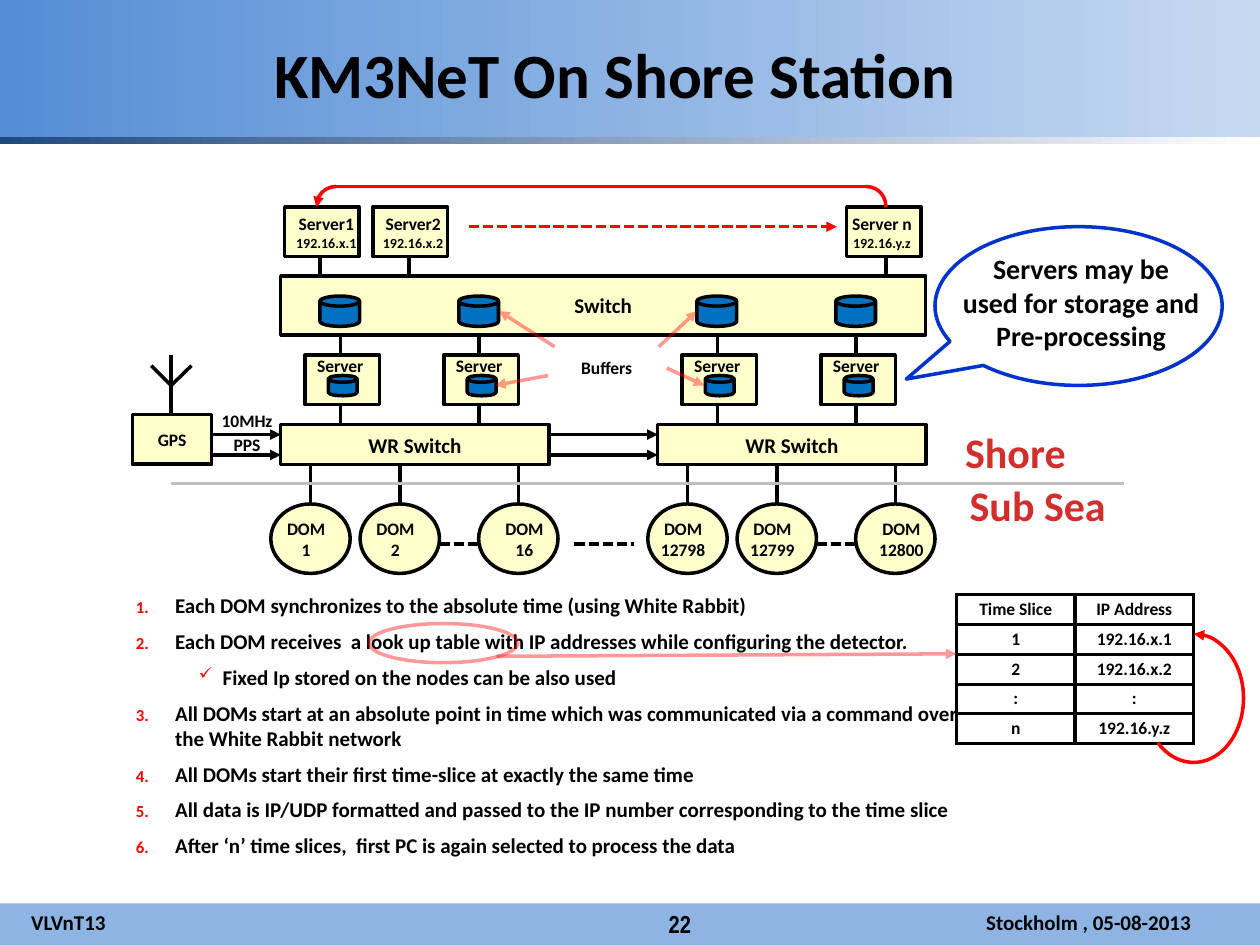
from lxml import etree
from pptx import Presentation
from pptx.dml.color import RGBColor
from pptx.enum.dml import MSO_LINE
from pptx.enum.shapes import MSO_CONNECTOR, MSO_SHAPE as Kind
from pptx.enum.text import MSO_ANCHOR as Anchor, PP_ALIGN as Align
from pptx.oxml.ns import qn
from pptx.util import Cm, Pt

BLACK, WHITE = RGBColor(0, 0, 0), RGBColor(255, 255, 255)
RED, CRIMSON = RGBColor(255, 0, 0), RGBColor(0xD0, 0x2F, 0x2C)
CREAM, DISK_BLUE = RGBColor(0xFF, 0xFF, 0xCC), RGBColor(0x00, 0x70, 0xC0)
BUBBLE_BLUE, GREY = RGBColor(0x00, 0x33, 0xCC), RGBColor(0xBF, 0xBF, 0xBF)
FOOTER_BLUE = RGBColor(0x8E, 0xB4, 0xE3)
BANNER = RGBColor(0x55, 0x8E, 0xD5), RGBColor(0xC6, 0xD9, 0xF1)
STRIP = RGBColor(0x1F, 0x49, 0x7D), WHITE

TOP_SERVERS = [  # name, address, box left, label centre, link x
    ("Server1", "192.16.x.1", 5.74, 6.58, 6.45),
    ("Server2", "192.16.x.2", 7.52, 8.33, 8.25),
    ("Server n", "192.16.y.z", 17.07, 17.78, 17.86),
]
HALVES = [(5.66, ["1", "2", "16"]), (13.26, ["12798", "12799", "12800"])]
DOM_OFFSETS = [(-0.2, -0.09), (1.6, -0.09), (3.99, 0.12)]  # left, label shift
SERVER_OFFSETS = [1.2, 4]
STEPS = [
    (0, "Each DOM synchronizes to the absolute time (using White Rabbit)"),
    (0, "Each DOM receives  a look up table with IP addresses while configuring the detector."),
    (1, "Fixed Ip stored on the nodes can be also used"),
    (0, "All DOMs start at an absolute point in time which was communicated via a command over "
        "the White Rabbit network"),
    (0, "All DOMs start their first time-slice at exactly the same time"),
    (0, "All data is IP/UDP formatted and passed to the IP number corresponding to the time slice"),
    (0, "After ‘n’ time slices,  first PC is again selected to process the data"),
]
INDENTS = [(1.02, -0.79), (1.98, -0.48)]
SLICES = [("Time Slice", "IP Address"), ("1", "192.16.x.1"), ("2", "192.16.x.2"),
          (":", ":"), ("n", "192.16.y.z")]
ANTENNA = [
    ((3.45, 7.16), (3.45, 8.36)), ((3.05, 7.37), (3.45, 7.77)), ((3.45, 7.77), (3.86, 7.37))]
CLOCK_ARROWS = [((left, y), (right, y)) for left, right in [(4.27, 5.66), (11.05, 13.26)]
                for y in (8.76, 9.17)]
FADED_ARROWS = [  # buffers to disks, lookup table to IP table
    ((13.28, 6.99), (14.05, 6.27)), ((11.18, 6.99), (10.06, 6.27)),
    ((11.05, 7.57), (9.98, 7.77)), ((13.44, 7.42), (14.2, 7.77)),
    ((10.01, 13.23), (19.28, 13.18))]
FREE_LABELS = [  # text, centre, top, width, size, colour
    ("PPS", 4.98, 8.62, 1.6, 10, BLACK), ("10MHz", 4.98, 8.15, 2, 10, BLACK),
    ("Buffers", 12.23, 7.07, 2, 10, BLACK), ("Shore", 20.47, 8.48, 3.2, 24, CRIMSON),
    ("Sub Sea", 20.92, 9.55, 4, 24, CRIMSON)]

deck = Presentation()
deck.slide_width, deck.slide_height = Cm(25.4), Cm(19.05)
page = deck.slides.add_slide(deck.slide_layouts[6])


def child(parent, tag, **attributes):
    return etree.SubElement(parent, qn(tag), attributes)


def write(frame, lines, sizes, align=Align.CENTER, color=BLACK, font="Calibri"):
    """Fill a text frame, one paragraph a line; the last size serves all later lines."""
    for index, line in enumerate(lines):
        para = frame.paragraphs[0] if index == 0 else frame.add_paragraph()
        para.alignment = align
        span = para.add_run()
        span.text = line
        size = sizes[min(index, len(sizes) - 1)]
        for key, value in {"name": font, "size": Pt(size), "bold": True}.items():
            setattr(span.font, key, value)
        span.font.color.rgb = color


def text(at, lines, *sizes, wrap=False, **style):
    box = page.shapes.add_textbox(*map(Cm, at))
    box.text_frame.word_wrap = wrap
    write(box.text_frame, lines, sizes, **style)
    return box


def label(center, top, lines, *sizes, width=2, **style):
    """Place a text box around a centre x, as tall as its lines need."""
    height = 0.25 + 0.045 * sizes[0] * len(lines)
    text((center - width / 2, top, width, height), lines, *sizes, **style)


def stroke(item, color=BLACK, dashed=False, faded=False, arrow=None):
    item.line.color.rgb = color
    item.line.width = Pt(2)
    if dashed:
        item.line.dash_style = MSO_LINE.SQUARE_DOT
    ln = item.line._get_or_add_ln()
    if faded:
        child(ln.find(".//" + qn("a:srgbClr")), "a:alpha", val="40000")
    if arrow:
        child(ln, arrow, type="triangle")


def shape(kind, at, fill=None, caption=None, size=12, adjust=(), outlined=True, **line_style):
    item = page.shapes.add_shape(kind, *map(Cm, at))
    item.shadow.inherit = False
    for index, value in enumerate(adjust):
        item.adjustments[index] = value
    if fill is None:
        item.fill.background()
    elif isinstance(fill, RGBColor):
        item.fill.solid()
        item.fill.fore_color.rgb = fill
    else:
        item.fill.gradient()
        item.fill.gradient_angle = 0
        for position, (stop, color) in enumerate(zip(item.fill.gradient_stops, fill)):
            stop.color.rgb, stop.position = color, position
    if outlined:
        stroke(item, **line_style)
    else:
        item.line.fill.background()
    if caption:
        item.text_frame.vertical_anchor = Anchor.MIDDLE
        write(item.text_frame, [caption], [size])


def line(start, end, **style):
    item = page.shapes.add_connector(MSO_CONNECTOR.STRAIGHT, *map(Cm, start + end))
    stroke(item, **style)
    child(item._element.spPr, "a:effectLst")


def banner_and_footer():
    shape(Kind.RECTANGLE, (0, 18.21, 25.4, 0.84), FOOTER_BLUE, outlined=False)
    text((12.88, 18.21, 1.65, 0.86), ["22"], 14, wrap=True, font="Arial Narrow")
    shape(Kind.RECTANGLE, (0, 0, 25.4, 2.77), BANNER, outlined=False)
    text((0, 0.6, 24.8, 1.8), ["KM3NeT On Shore Station"], 36, wrap=True)
    shape(Kind.RECTANGLE, (0, 2.77, 25.4, 0.13), STRIP, outlined=False)
    footer = text((0.38, 18.21, 25.02, 0.76), ["VLVnT13\tStockholm , 05-08-2013"], 12,
                  wrap=True, align=Align.LEFT)
    tabs = child(footer.text_frame.paragraphs[0]._p.get_or_add_pPr(), "a:tabLst")
    child(tabs, "a:tab", pos=str(Cm(19.25)), algn="l")


def numbered_steps():
    box = text((2.26, 11.83, 17.6, 5.74), [step for _, step in STEPS], 12,
               wrap=True, align=Align.LEFT)
    for para, (level, _) in zip(box.text_frame.paragraphs, STEPS):
        para.level, para.space_before = level, Pt(6)
        props = para._p.get_or_add_pPr()
        for key, value in zip(("marL", "indent"), INDENTS[level]):
            props.set(key, str(Cm(value)))
        child(child(props, "a:buClr"), "a:srgbClr", val=str(RED))
        child(props, "a:buSzPct", val="80000")
        if level:
            child(props, "a:buChar", char="✓")
        else:
            child(props, "a:buAutoNum", type="arabicPeriod")


def slice_table():
    height = 0.6
    table = page.shapes.add_table(len(SLICES), 2, Cm(19.28), Cm(11.99), Cm(4.78),
                                  Cm(height * len(SLICES))).table
    for row, values in zip(table.rows, SLICES):
        row.height = Cm(height)
        for cell, value in zip(row.cells, values):
            cell.margin_top = cell.margin_bottom = 0
            cell.vertical_anchor = Anchor.MIDDLE
            write(cell.text_frame, [value], [10])
            props = cell._tc.get_or_add_tcPr()
            for side in ("a:lnL", "a:lnR", "a:lnT", "a:lnB"):
                border = child(props, side, w=str(Pt(2)))
                child(child(border, "a:solidFill"), "a:srgbClr", val=str(BLACK))
            cell.fill.solid()
            cell.fill.fore_color.rgb = WHITE


def station_half(left, doms):
    """Two servers with buffers, their WR switch and the DOMs below it."""
    shape(Kind.RECTANGLE, (left, 8.56, 5.41, 0.81), CREAM, "WR Switch")
    for link in (left + offset for offset in SERVER_OFFSETS):
        shape(Kind.FLOWCHART_MAGNETIC_DISK, (link - 0.41, 5.97, 0.8, 0.61), DISK_BLUE)
        shape(Kind.RECTANGLE, (link - 0.71, 7.16, 1.5, 1), CREAM)
        shape(Kind.FLOWCHART_MAGNETIC_DISK, (link - 0.24, 7.57, 0.58, 0.41), DISK_BLUE)
        label(link, 7.04, ["Server"], 10)
        for top in (6.76, 8.15):
            line((link, top), (link, top + 0.4))
    for number, (offset, shift) in zip(doms, DOM_OFFSETS):
        center = left + offset + 0.8
        line((center, 9.37), (center, 10.16))
        shape(Kind.OVAL, (center - 0.8, 10.16, 1.6, 1.4), CREAM)
        label(center + shift, 10.31, ["DOM", number], 10)
    line((left + 3.2, 10.97), (left + 3.99, 10.97), dashed=True)


banner_and_footer()
numbered_steps()
slice_table()
shape(Kind.RECTANGLE, (5.66, 5.56, 13, 1.19), CREAM, "Switch")
for name, address, left, center, link in TOP_SERVERS:
    shape(Kind.RECTANGLE, (left, 4.17, 1.5, 1), CREAM)
    label(center, 4.17, [name, address], 10, 8)
    line((link, 5.16), (link, 5.56))
for left, doms in HALVES:
    station_half(left, doms)
shape(Kind.RECTANGLE, (2.67, 8.36, 1.6, 1), CREAM, "GPS", 10)
for start, end in ANTENNA:
    line(start, end)
for start, end in CLOCK_ARROWS:
    line(start, end, arrow="a:tailEnd")
for start, end in FADED_ARROWS:
    line(start, end, color=RED, faded=True, arrow="a:tailEnd")
line((11.58, 10.97), (12.78, 10.97), dashed=True)
line((3.45, 9.75), (22.66, 9.75), color=GREY)
line((9.45, 4.57), (16.87, 4.57), color=RED, dashed=True, arrow="a:tailEnd")
line((6.78, 3.76), (17.45, 3.76), color=RED)
shape(Kind.ARC, (6.38, 3.76, 0.79, 0.79), adjust=(105.73, 162.12), color=RED, arrow="a:headEnd")
shape(Kind.ARC, (17.07, 3.76, 0.79, 0.79), adjust=(161.88, 2.27), color=RED)
shape(Kind.ARC, (23.06, 12.78, 2.01, 2.59), adjust=(162, 77.44), color=RED, arrow="a:headEnd")
shape(Kind.OVAL, (7.44, 12.57, 3, 0.79), color=RED, faded=True)
for caption, center, top, width, size, color in FREE_LABELS:
    label(center, top, [caption], size, width=width, color=color)
shape(Kind.OVAL_CALLOUT, (18.85, 4.57, 5.79, 3.2), adjust=(-0.6, 0.46), color=BUBBLE_BLUE)
text((18.72, 4.95, 6.15, 3), ["Servers may be", "used for storage and", "Pre-processing"], 16)

deck.save("out.pptx")
